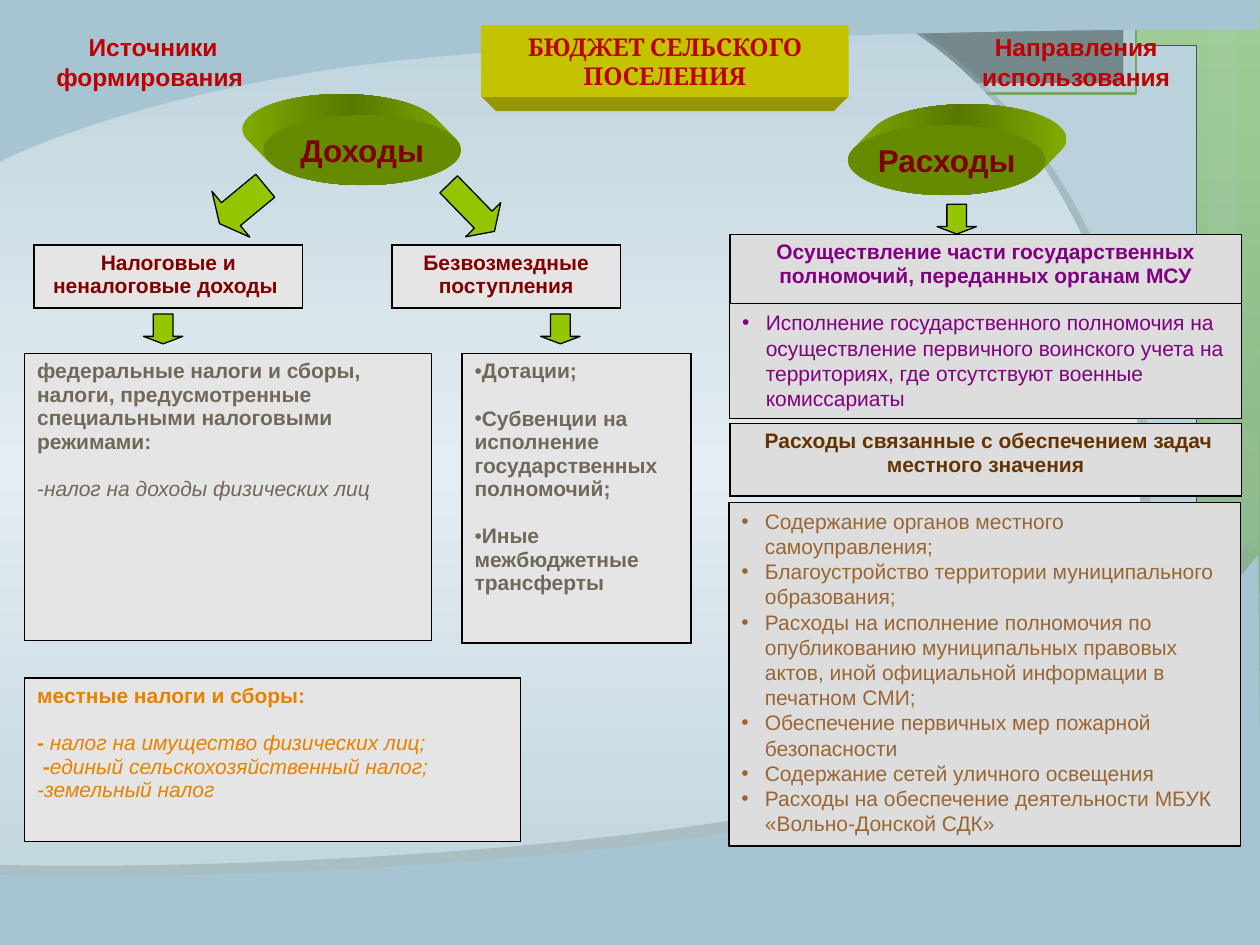
import math
import pptx
import pptx.util
import pptx.dml.color
import pptx.enum.shapes
import pptx.enum.text
import pptx.oxml.ns
from lxml import etree

Pt = pptx.util.Pt
qn = pptx.oxml.ns.qn
SHAPE = pptx.enum.shapes.MSO_SHAPE
ALIGN = pptx.enum.text.PP_ALIGN
ANCHOR = pptx.enum.text.MSO_ANCHOR

C = {
    "white": "FFFFFF", "black": "000000", "sky": "7AA8BC", "wave": "A6C4D2",
    "shade": "8EA8A7", "frame": "F5F5F5", "leaf": "74A510", "taupe": "71685A",
    "red": "C00000", "maroon": "800000", "purple": "800080", "brown": "663300",
    "tan": "996633", "orange": "E68200", "light": "E5E5E5", "grey": "DDDDDD",
    "lime": "94C600", "olive": "678B00", "banner": "C3C300", "edge": "969600",
}
BACKDROP = [(0, "C2F35F"), (62, "92BE3F"), (100, "80A33D")]
GLOW = [(0, "BDD3DD"), (50, "E4EDF1"), (100, "BDD3DD")]
RIM = [(0, "7FA800"), (50, "587800"), (100, "7FA800")]


def rgb(name):
    return pptx.dml.color.RGBColor.from_string(C[name])


def gradient(fill, el, stops, angle):
    fill.gradient()
    fill.gradient_angle = angle
    gs_list = el.find(".//" + qn("a:gsLst"))
    for gs in list(gs_list):
        gs_list.remove(gs)
    for pos, color in stops:
        gs = etree.SubElement(gs_list, qn("a:gs"), pos=str(pos * 1000))
        etree.SubElement(gs, qn("a:srgbClr"), val=color)


def paint(sp, fill=None, line=None, width=0.75, alpha=None):
    sp.shadow.inherit = False
    if fill:
        sp.fill.solid()
        sp.fill.fore_color.rgb = rgb(fill)
    else:
        sp.fill.background()
    if line:
        sp.line.color.rgb = rgb(line)
        sp.line.width = Pt(width)
    else:
        sp.line.fill.background()
    if alpha:
        for clr in sp._element.spPr.iter(qn("a:srgbClr")):
            etree.SubElement(clr, qn("a:alpha"), val=str(alpha * 1000))


def shape(s, kind, box, fill, line=None, width=0.75, alpha=None):
    sp = s.shapes.add_shape(kind, *map(Pt, box))
    paint(sp, fill, line, width, alpha)
    return sp


def outline(s, start, *parts, fill=None, line=None, width=0.75, alpha=None):
    ends = [(round(part[-2] * 100), round(part[-1] * 100)) for part in (start, *parts)]
    fb = s.shapes.build_freeform(*ends[0], scale=Pt(1) / 100)
    fb.add_line_segments(ends[1:], close=True)
    sp = fb.convert_to_shape()
    left, top = (min(axis) for axis in zip(*ends))
    segments = sp._element.findall(".//" + qn("a:lnTo"))
    for part, segment in zip(parts, segments):
        if len(part) == 6:
            curve = etree.Element(qn("a:cubicBezTo"))
            for x, y in zip(part[::2], part[1::2]):
                etree.SubElement(curve, qn("a:pt"), x=str(round(x * 100) - left),
                                 y=str(round(y * 100) - top))
            segment.getparent().replace(segment, curve)
    paint(sp, fill, line, width, alpha)
    return sp


def cast_shadow(sp, dist, angle):
    effects = sp._element.spPr.find(qn("a:effectLst"))
    shadow = etree.SubElement(effects, qn("a:outerShdw"), blurRad="0",
                              dist=str(Pt(dist)), dir=str(angle * 60000))
    clr = etree.SubElement(shadow, qn("a:srgbClr"), val=C["shade"])
    etree.SubElement(clr, qn("a:alpha"), val="50000")


def para(*runs, bullet=None, gap=0):
    return runs, bullet, gap


def write(tf, paras, size, color, align=ALIGN.LEFT, font="Arial", indent=0):
    tf.word_wrap = True
    for i, (runs, bullet, gap) in enumerate(paras):
        p = tf.paragraphs[0] if i == 0 else tf.add_paragraph()
        p.alignment = align
        p.line_spacing = 1.0
        p.space_before = Pt(gap)
        if bullet:
            pPr = p._p.get_or_add_pPr()
            pPr.set("marL", str(Pt(indent)))
            pPr.set("indent", str(-Pt(indent)))
            etree.SubElement(pPr, qn("a:buFont"), typeface=font)
            etree.SubElement(pPr, qn("a:buChar"), char=bullet)
        for text, style in runs:
            r = p.add_run()
            r.text = text
            r.font.size, r.font.name = Pt(size), font
            r.font.bold, r.font.italic = "b" in style, "i" in style
            r.font.color.rgb = rgb(color)


def cell_box(s, box, fill, paras, color, align=ALIGN.LEFT):
    table = s.shapes.add_table(1, 1, *map(Pt, box)).table
    table.first_row = table.horz_banding = False
    cell = table.cell(0, 0)
    tcPr = cell._tc.get_or_add_tcPr()
    for side in "LRTB":
        ln = etree.SubElement(tcPr, qn("a:ln" + side), w=str(Pt(1)))
        solid = etree.SubElement(ln, qn("a:solidFill"))
        etree.SubElement(solid, qn("a:srgbClr"), val=C["black"])
    cell.fill.solid()
    cell.fill.fore_color.rgb = rgb(fill)
    write(cell.text_frame, paras, 12, color, align)


def list_box(s, box, items, color):
    sp = shape(s, SHAPE.RECTANGLE, box, "grey", "black")
    sp.text_frame.vertical_anchor = ANCHOR.TOP
    write(sp.text_frame, [para((item, ""), bullet="•") for item in items],
          12, color, indent=13.5)


def heading(s, box, text):
    tf = s.shapes.add_textbox(*map(Pt, box)).text_frame
    write(tf, [para((text, "b"))], 14, "red", ALIGN.CENTER)


def disc(s, left, top, text, dx):
    w, h, dy, k = 113, 40, -12, 0.5523

    def at(a, shift, pull=0):
        x, y = math.cos(a) - pull * math.sin(a), math.sin(a) + pull * math.cos(a)
        return left + w / 2 * (1 + x) + shift * dx, top + h / 2 * (1 + y) + shift * dy

    a = math.atan2(dy / h, dx / w) - math.pi / 2
    parts = []
    for shift in (1, 0):
        parts.append(at(a, shift))
        for _ in range(2):
            b = a + math.pi / 2
            parts.append(at(a, shift, k) + at(b, shift, -k) + at(b, shift))
            a = b
    sp = outline(s, *parts)
    gradient(sp.fill, sp._element, RIM, 0)
    sp = shape(s, SHAPE.OVAL, (left, top, w, h), "olive")
    sp.text_frame.vertical_anchor = ANCHOR.MIDDLE
    write(sp.text_frame, [para((text, "b"))], 18, "maroon", ALIGN.CENTER)
    sp.text_frame.word_wrap = False


def arrow(s, box, rotation=0, head=0.25):
    sp = shape(s, SHAPE.DOWN_ARROW, box, "lime", "black")
    sp.adjustments[1] = head
    sp.rotation = rotation


def backdrop(s):
    gradient(s.background.fill, s._element, BACKDROP, 270)
    for left, width in ((648, 59.75), (690.5, 29.5)):
        shape(s, SHAPE.RECTANGLE, (left, 0, width, 540), "white", alpha=10)
    sp = shape(s, SHAPE.HEXAGON, (600.5, 226, 126, 109.5), "white", "white", 1, 7)
    sp.adjustments[0] = 0.285
    sp.rotation = 30
    for top, fill in ((117.5, None), (319.5, "white")):
        sp = outline(s, (666.5, top + 31.5), (721.5, top), (726.5, top + 3.5),
                     (726.5, top + 123.5), (721.5, top + 126.5), (666.5, top + 95),
                     fill=fill, line="white", width=1, alpha=8)
        sp.rotation = 30
    shape(s, SHAPE.RECTANGLE, (36, 26, 648, 487.5), "white", "black", 0.5)
    shape(s, SHAPE.RECTANGLE, (359.5, -1.5, 289.5, 55), "frame", "leaf", 1.25)
    shape(s, SHAPE.RECTANGLE, (366.5, -1.5, 275.5, 49), "taupe")
    shape(s, SHAPE.RECTANGLE, (0, 0, 720, 540), "sky", alpha=51)
    sp = outline(s, (488, 0), (597, 46, 654, 186, 651, 276),
                 (655, 366, 582, 494, 473, 538), (-2, 538), (-3, -2))
    gradient(sp.fill, sp._element, GLOW, 270)
    cast_shadow(sp, 6.3, 18)
    sp = outline(s, (719, 317), (688, 356, 613, 430, 492, 461),
                 (372, 492, 127, 504, -1, 500), (-3, 545), (721, 542), fill="wave")
    cast_shadow(sp, 8.5, 225)
    outline(s, (-3, 94), (27, 78, 112, 47, 233, 34),
            (354, 22, 590, 16, 719, 17), (720, -2), (-3, -2), fill="wave")


def banner(s):
    outline(s, (275, 55), (485, 55), (476.5, 63.5), (283.5, 63.5), fill="edge")
    sp = s.shapes.title
    s.shapes._spTree.append(sp._element)
    sp.left, sp.top, sp.width, sp.height = map(Pt, (275, 14.5, 210, 41))
    paint(sp, "banner")
    tf = sp.text_frame
    tf.auto_size = pptx.enum.text.MSO_AUTO_SIZE.NONE
    tf.vertical_anchor = ANCHOR.MIDDLE
    write(tf, [para(("БЮДЖЕТ СЕЛЬСКОГО ПОСЕЛЕНИЯ", "b"))], 14, "red", ALIGN.CENTER, "Cambria")


def income(s):
    heading(s, (14.5, 15, 146, 41), "Источники формирования ")
    cell_box(s, (19.5, 140, 153.5, 36), "light",
             [para(("Налоговые и неналоговые доходы ", "b"))], "maroon", ALIGN.CENTER)
    cell_box(s, (224, 140, 130.5, 36), "light",
             [para(("Безвозмездные поступления", "b"))], "maroon", ALIGN.CENTER)
    cell_box(s, (264, 202, 131, 165.5), "light", [
        para(("Дотации;", "b"), bullet="•"),
        para(("Субвенции на исполнение государственных полномочий;", "b"), bullet="•", gap=13.5),
        para(("Иные межбюджетные трансферты", "b"), bullet="•", gap=13.5)], "taupe")
    cell_box(s, (14, 202, 232.5, 164), "light", [
        para(("федеральные налоги и сборы, налоги, предусмотренные "
              "специальными налоговыми режимами:", "b")),
        para(("налог на доходы физических лиц", "i"), bullet="-", gap=13.5)], "taupe")
    cell_box(s, (14, 387.5, 283.5, 93.5), "light", [
        para(("местные налоги и сборы:", "b")),
        para(("- ", "b"), ("налог на имущество физических лиц;", "i"), gap=13.5),
        para((" -", "b"), ("единый сельскохозяйственный налог;", "i")),
        para(("-земельный налог", "i"))], "orange")
    disc(s, 150.5, 65.75, "Доходы", -12)
    arrow(s, (121.5, 100, 34, 34), 50.4)
    arrow(s, (255.5, 100, 28, 37.5), 315.8, 0.33)
    for left in (82, 309):
        arrow(s, (left, 179.5, 22.5, 17))


def spending(s):
    heading(s, (535.5, 15, 159, 41), "Направления использования")
    cell_box(s, (417, 134, 292.5, 39.5), "grey",
             [para(("Осуществление части государственных полномочий, "
                    "переданных органам МСУ", "b"))], "purple", ALIGN.CENTER)
    list_box(s, (417, 173.5, 292.5, 65.5), [
        "Исполнение государственного полномочия на осуществление первичного "
        "воинского учета на территориях, где отсутствуют военные комиссариаты"], "purple")
    cell_box(s, (417, 242, 292.5, 41.5), "grey",
             [para((" ", ""), ("Расходы связанные с обеспечением задач местного значения", "b"))],
             "brown", ALIGN.CENTER)
    list_box(s, (416.5, 287, 292.5, 196.5), [
        "Содержание органов местного самоуправления;",
        "Благоустройство территории муниципального образования;",
        "Расходы на исполнение полномочия по опубликованию муниципальных "
        "правовых актов, иной официальной информации в печатном СМИ;",
        "Обеспечение первичных мер пожарной безопасности",
        "Содержание сетей уличного освещения",
        "Расходы на обеспечение деятельности МБУК «Вольно-Донской СДК»"], "tan")
    disc(s, 484.5, 71.5, "Расходы", 12)
    arrow(s, (535.5, 116.75, 22.5, 17))


def main():
    prs = pptx.Presentation()
    prs.slide_width, prs.slide_height = Pt(720), Pt(540)
    s = prs.slides.add_slide(prs.slide_layouts[5])
    backdrop(s)
    banner(s)
    income(s)
    spending(s)
    prs.save("out.pptx")


if __name__ == "__main__":
    main()
